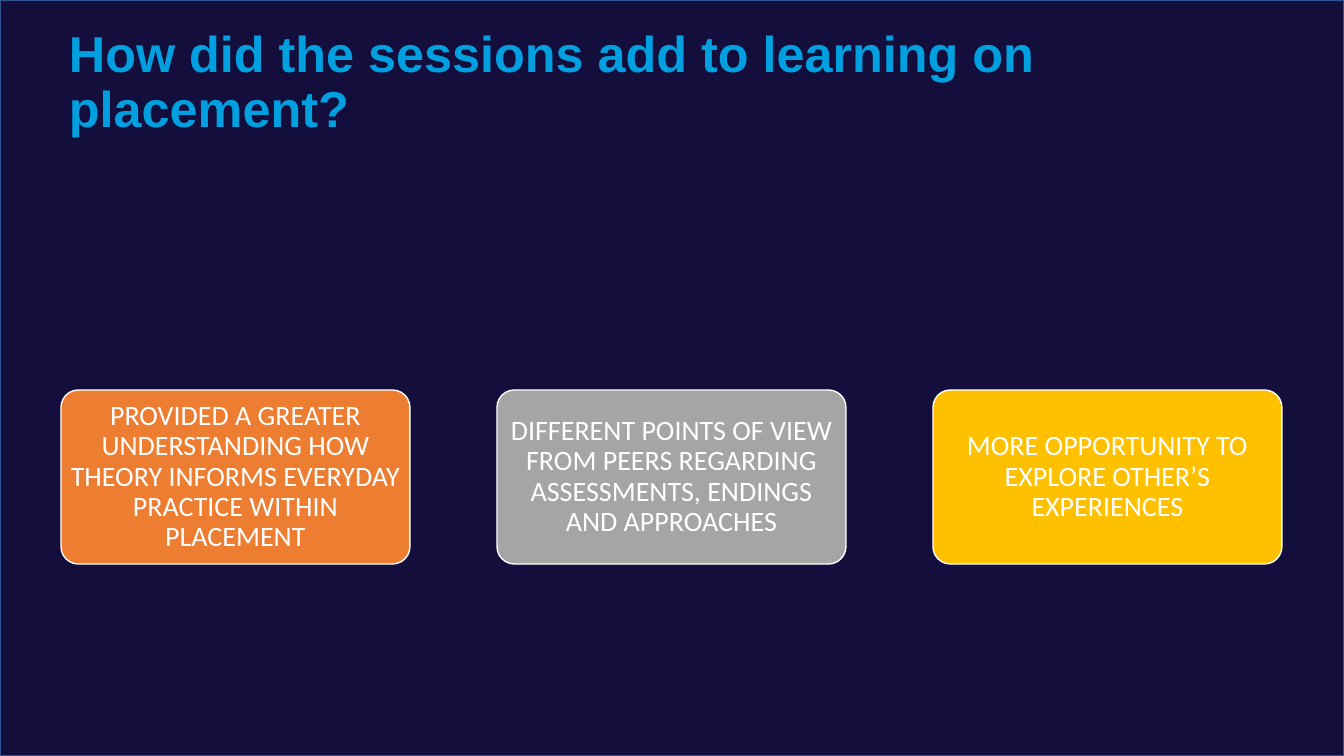
from pptx import Presentation, util as u
from pptx.dml.color import RGBColor
from pptx.enum import shapes, text

PX = 12192000 / 1344
NAVY = RGBColor(0x13, 0x0E, 0x3B)
EDGE = RGBColor(0x32, 0x54, 0x91)
CYAN = RGBColor(0x00, 0x9F, 0xDF)
ORANGE = RGBColor(0xED, 0x7D, 0x31)
GREY = RGBColor(0xA5, 0xA5, 0xA5)
GOLD = RGBColor(0xFF, 0xC0, 0x00)
WHITE = RGBColor(0xFF, 0xFF, 0xFF)

CARD_LEFT, CARD_TOP, CARD_W, CARD_H = 61, 390, 349, 174
CARD_STEP = 436
CARDS = [
    ("PROVIDED A GREATER UNDERSTANDING HOW THEORY INFORMS EVERYDAY "
     "PRACTICE WITHIN PLACEMENT", ORANGE),
    ("DIFFERENT POINTS OF VIEW FROM PEERS REGARDING ASSESSMENTS, "
     "ENDINGS AND APPROACHES", GREY),
    ("MORE OPPORTUNITY TO EXPLORE OTHER’S EXPERIENCES", GOLD),
]


def px(n):
    return u.Emu(round(n * PX))


def add_box(kind, x, y, w, h, fill, line):
    sp = s.shapes.add_shape(kind, px(x), px(y), px(w), px(h))
    sp.shadow.inherit = False
    sp.fill.solid()
    sp.fill.fore_color.rgb = fill
    sp.line.color.rgb = line
    sp.line.width = u.Pt(1)
    return sp


prs = Presentation()
prs.slide_width, prs.slide_height = px(1344), px(756)
s = prs.slides.add_slide(prs.slide_layouts[6])

add_box(shapes.MSO_SHAPE.RECTANGLE, 0, 0, 1344, 756, NAVY, EDGE)

title = s.shapes.add_textbox(px(59), px(22), px(1024), px(121))
tf = title.text_frame
tf.word_wrap = True
tf.vertical_anchor = text.MSO_ANCHOR.BOTTOM
p = tf.paragraphs[0]
p.line_spacing = 0.9
r = p.add_run()
r.text = "How did the sessions add to learning on placement?"
r.font.name, r.font.size, r.font.bold = "Arial", u.Pt(36), True
r.font.color.rgb = CYAN

for i, (words, colour) in enumerate(CARDS):
    card = add_box(shapes.MSO_SHAPE.ROUNDED_RECTANGLE, CARD_LEFT + i * CARD_STEP,
                   CARD_TOP, CARD_W, CARD_H, colour, WHITE)
    card.adjustments[0] = 0.1
    tf = card.text_frame
    tf.word_wrap = True
    tf.vertical_anchor = text.MSO_ANCHOR.MIDDLE
    tf.margin_left = tf.margin_right = px(4)
    tf.margin_top = tf.margin_bottom = px(3)
    p = tf.paragraphs[0]
    p.alignment = text.PP_ALIGN.CENTER
    p.line_spacing = 0.9
    r = p.add_run()
    r.text = words
    r.font.name, r.font.size = "Calibri", u.Pt(20)
    r.font.color.rgb = WHITE

prs.save("out.pptx")
